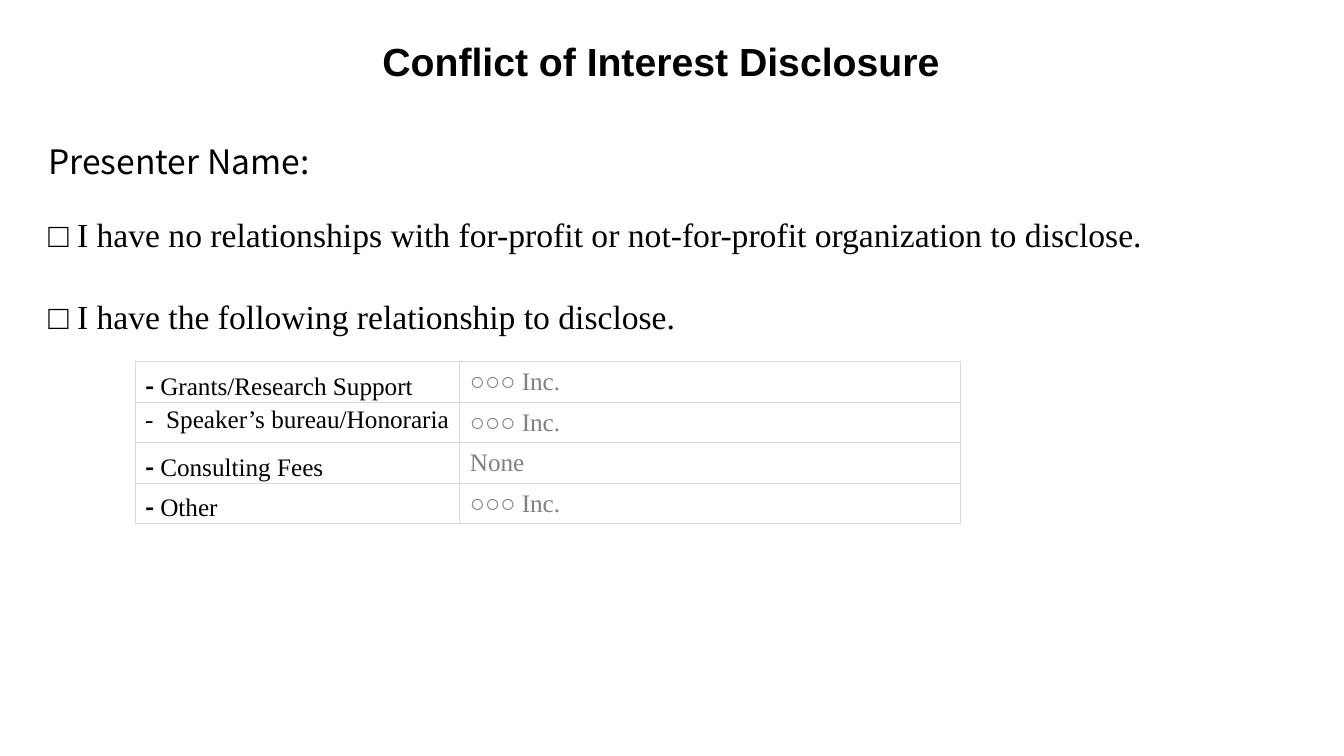
from lxml import etree
from pptx import Presentation
from pptx.dml.color import RGBColor
from pptx.enum.text import MSO_ANCHOR as Anchor, MSO_AUTO_SIZE as AutoSize, PP_ALIGN as Align
from pptx.oxml.ns import qn
from pptx.util import Inches, Pt

RELATIONSHIPS = [
    ("Grants/Research Support", "○○○ Inc."),
    ("Speaker’s bureau/Honoraria", "○○○ Inc."),
    ("Consulting Fees", "None"),
    ("Other", "○○○ Inc."),
]


def rgb(value):
    return RGBColor.from_string(value)


class DisclosureSlide:
    SANS, SERIF, CJK = "Arial", "Times New Roman", "Noto Sans CJK KR"
    BLACK, GREY, BORDER = "000000", "808080", "D9D9D9"

    def __init__(self, prs):
        self.s = prs.slides.add_slide(prs.slide_layouts[1])

    def run(self, p, text, size, font, color=BLACK, bold=False):
        r = p.add_run()
        r.text = text
        r.font.size, r.font.name, r.font.bold = Pt(size), font, bold
        r.font.color.rgb = rgb(color)
        return r

    def place(self, sp, left, top, width, height, anchor):
        """Move a text shape and return its text frame, set to wrap."""
        sp.left, sp.top = Inches(left), Inches(top)
        sp.width, sp.height = Inches(width), Inches(height)
        tf = sp.text_frame
        tf.word_wrap, tf.auto_size = True, AutoSize.NONE
        tf.vertical_anchor = anchor
        return tf

    def title(self, text, *box):
        p = self.place(self.s.shapes.title, *box, Anchor.MIDDLE).paragraphs[0]
        p.alignment = Align.CENTER
        self.run(p, text, 28, self.SANS, bold=True)

    def label(self, text, *box):
        sp = self.s.shapes.add_textbox(0, 0, 0, 0)
        p = self.place(sp, *box, Anchor.MIDDLE).paragraphs[0]
        self.run(p, text, 24, self.CJK)

    def statements(self, lines, *box):
        tf = self.place(self.s.placeholders[1], *box, Anchor.TOP)
        for i, line in enumerate(lines):
            p = tf.add_paragraph() if i else tf.paragraphs[0]
            pPr = p._p.get_or_add_pPr()
            pPr.set("marL", "0")
            pPr.set("indent", "0")
            etree.SubElement(pPr, qn("a:buNone"))
            p.space_before = Pt(30 if i else 0)
            self.run(p, line, 24, self.SERIF)

    def style_cell(self, cell):
        cell.fill.background()
        cell.vertical_anchor = Anchor.MIDDLE
        tcPr = cell._tc.get_or_add_tcPr()
        for i, side in enumerate("LRTB"):
            ln = etree.Element(qn(f"a:ln{side}"), w=str(Pt(1)))
            fill = etree.SubElement(ln, qn("a:solidFill"))
            etree.SubElement(fill, qn("a:srgbClr"), val=self.BORDER)
            tcPr.insert(i, ln)

    def table(self, rows, left, top, widths, row_height):
        table = self.s.shapes.add_table(
            len(rows), len(widths), Inches(left), Inches(top),
            Inches(sum(widths)), Inches(row_height * len(rows))).table
        table.first_row = table.horz_banding = False
        for column, width in zip(table.columns, widths):
            column.width = Inches(width)
        for i, (kind, party) in enumerate(rows):
            table.rows[i].height = Inches(row_height)
            kind_cell, party_cell = table.cell(i, 0), table.cell(i, 1)
            self.style_cell(kind_cell)
            self.style_cell(party_cell)
            kind_cell.margin_top, kind_cell.margin_bottom = Inches(0.04), 0
            p = kind_cell.text_frame.paragraphs[0]
            if kind.startswith("Speaker"):
                kind_cell.vertical_anchor = Anchor.TOP
                dash = self.run(p, "- ", 18, self.SERIF)
                dash._r.get_or_add_rPr().set("spc", "225")
            else:
                self.run(p, "- ", 18, self.CJK, bold=True)
            self.run(p, kind, 18, self.SERIF)
            self.run(party_cell.text_frame.paragraphs[0], party, 18, self.SERIF, self.GREY)


def main():
    prs = Presentation()
    prs.slide_width, prs.slide_height = Inches(13.33), Inches(7.5)
    slide = DisclosureSlide(prs)
    slide.title("Conflict of Interest Disclosure", 2.31, 0.32, 8.49, 0.57)
    slide.label("Presenter Name:", 0.38, 1.35, 10.72, 0.5)
    slide.statements([
        "□ I have no relationships with for-profit or not-for-profit organization to disclose.",
        "□ I have the following relationship to disclose.",
    ], 0.38, 2.07, 12.4, 1.31)
    slide.table(RELATIONSHIPS, 1.34, 3.59, (3.22, 4.97), 0.4)
    prs.save("out.pptx")


if __name__ == "__main__":
    main()
